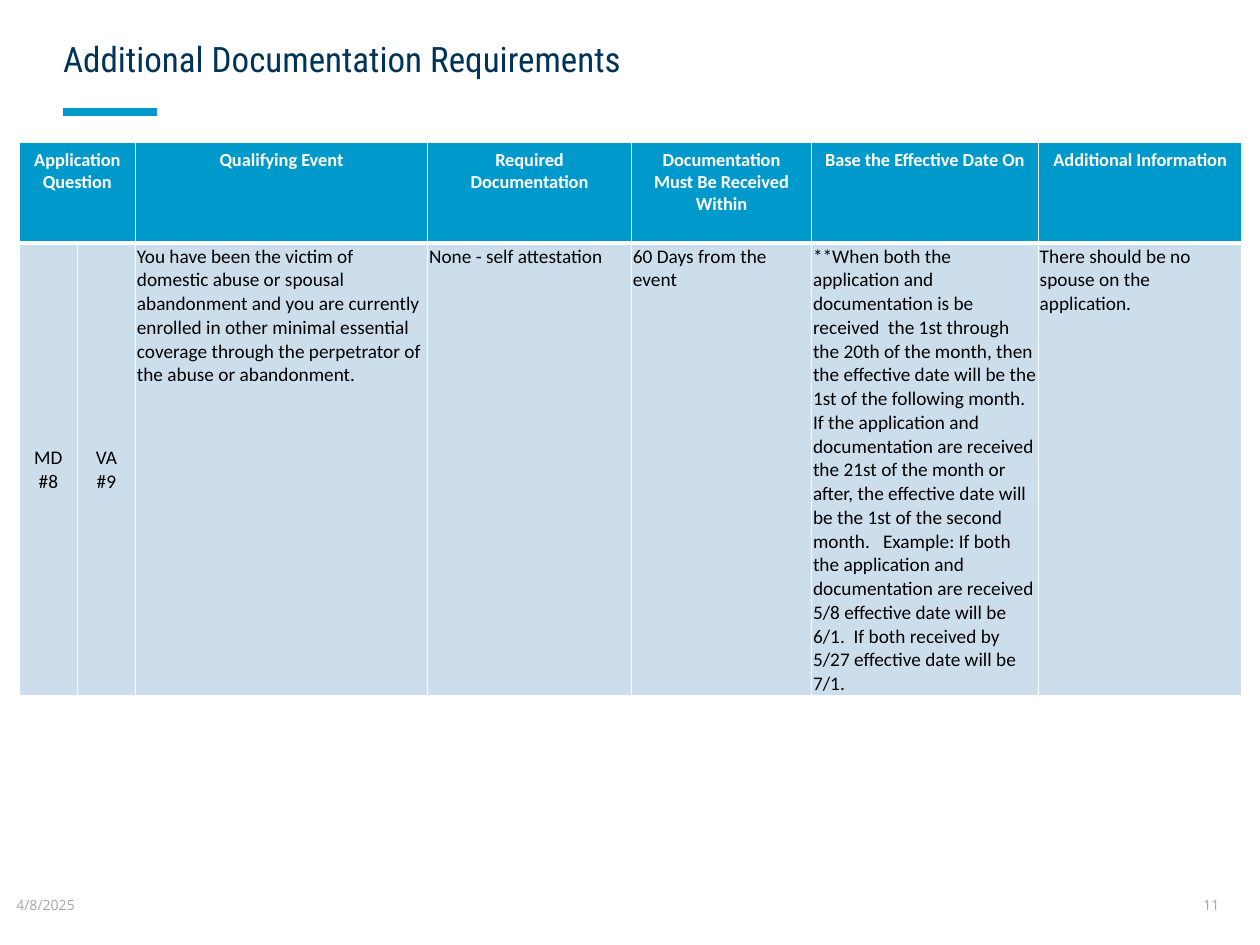
import pptx
import pptx.util
import pptx.dml.color
import pptx.enum.shapes
import pptx.enum.text
import pptx.oxml.ns
from lxml import etree

Cm, Pt = pptx.util.Cm, pptx.util.Pt
ALIGN, ANCHOR = pptx.enum.text.PP_ALIGN, pptx.enum.text.MSO_ANCHOR
INK = {"navy": "003359", "blue": "0099CC", "pale": "CCDEEC",
       "grey": "A6A6A6", "white": "FFFFFF", "black": "000000"}
HEAD = ["Application Question", None, "Qualifying Event", "Required Documentation",
        "Documentation Must Be Received Within", "Base the Effective Date On",
        "Additional Information"]
BODY = [
    "MD\v#8",
    "VA\v#9",
    "You have been the victim of domestic abuse or spousal abandonment and you are "
    "currently enrolled in other minimal essential coverage through the perpetrator "
    "of the abuse or abandonment.",
    "None - self attestation",
    "60 Days from the event",
    "**When both the application and documentation is be received  the 1st through "
    "the 20th of the month, then the effective date will be the 1st of the following "
    "month.  If the application and documentation are received the 21st of the month "
    "or after, the effective date will be the 1st of the second month.   Example: If "
    "both the application and documentation are received 5/8 effective date will be "
    "6/1.  If both received by 5/27 effective date will be 7/1.",
    "There should be no spouse on the application.",
]
COLS = [1.17, 1.17, 5.89, 4.11, 3.63, 4.57, 4.11]
ROWS = [2.03, 9.12]


def color(name):
    return pptx.dml.color.RGBColor.from_string(INK[name])


def apply(item, form):
    for key, val in form.items():
        setattr(item, key, val)


def write(frame, text, ink, font, align=ALIGN.LEFT):
    frame.text = text
    para = frame.paragraphs[0]
    para.alignment = align
    for run in para.runs:
        apply(run.font, font)
        run.font.color.rgb = color(ink)
    return para


def place(shape, box):
    apply(shape, dict(zip(("left", "top", "width", "height"), map(Cm, box))))


def pad(left, top, right, base):
    names = ("margin_left", "margin_top", "margin_right", "margin_bottom")
    return dict(zip(names, map(Cm, (left, top, right, base))))


def header(slide, box):
    left, top, width, height = box
    title = slide.shapes.title
    place(title, box)
    frame = title.text_frame
    apply(frame, {"word_wrap": True, "vertical_anchor": ANCHOR.MIDDLE,
                  "auto_size": pptx.enum.text.MSO_AUTO_SIZE.NONE,
                  **pad(0, 0.76, 0, 0.51)})
    para = write(frame, "Additional Documentation Requirements", "navy",
                 {"name": "Roboto Condensed", "size": Pt(20)})
    para.line_spacing = 0.9

    level = Cm(top + height + 0.05)
    rule = slide.shapes.add_connector(pptx.enum.shapes.MSO_CONNECTOR.STRAIGHT,
                                      Cm(left), level, Cm(left + 1.9), level)
    rule.line.color.rgb = color("blue")
    rule.line.width = Pt(4.5)
    etree.SubElement(rule._element.spPr, pptx.oxml.ns.qn("a:effectLst"))


def border(cell, base):
    """Draw white cell borders, with the bottom one base points wide."""
    props = cell._tc.get_or_add_tcPr()
    widths = {"lnL": 1, "lnR": 1, "lnT": 1, "lnB": base}
    for spot, (tag, width) in enumerate(widths.items()):
        line = etree.Element(pptx.oxml.ns.qn("a:" + tag), w=str(Pt(width)))
        fill = etree.SubElement(line, pptx.oxml.ns.qn("a:solidFill"))
        etree.SubElement(fill, pptx.oxml.ns.qn("a:srgbClr"), val=INK["white"])
        props.insert(spot, line)


def grid(slide, left, top):
    table = slide.shapes.add_table(len(ROWS), len(COLS), Cm(left), Cm(top),
                                   Cm(sum(COLS)), Cm(sum(ROWS))).table
    for col, width in zip(table.columns, COLS):
        col.width = Cm(width)
    for row, height in zip(table.rows, ROWS):
        row.height = Cm(height)
    table.cell(0, 0).merge(table.cell(0, 1))

    for col, (label, detail) in enumerate(zip(HEAD, BODY)):
        top_cell, low_cell = table.cell(0, col), table.cell(1, col)
        for cell, fill, base in ((top_cell, "blue", 3), (low_cell, "pale", 1)):
            cell.fill.solid()
            cell.fill.fore_color.rgb = color(fill)
            border(cell, base)
        if label:
            write(top_cell.text_frame, label, "white",
                  {"name": "Calibri", "size": Pt(10.5), "bold": True}, ALIGN.CENTER)
        key = col < 2
        apply(low_cell, {"vertical_anchor": ANCHOR.MIDDLE if key else ANCHOR.TOP,
                         **pad(0.03, 0.03, 0.03, 0)})
        write(low_cell.text_frame, detail, "black",
              {"name": "Calibri", "size": Pt(11), "bold": False},
              ALIGN.CENTER if key else ALIGN.LEFT)


def note(slide, text, box, wrap):
    shape = slide.shapes.add_textbox(*map(Cm, box))
    apply(shape.text_frame, {"word_wrap": wrap, "vertical_anchor": ANCHOR.MIDDLE,
                             **pad(0, 0.13, 0, 0.13)})
    write(shape.text_frame, text, "grey", {"name": "Open Sans", "size": Pt(8)})


def footer(slide, top, height):
    note(slide, "4/8/2025", (0.33, top, 1.85, height), False)
    note(slide, "11", (24.26, top, 0.69, height), True)


def main():
    deck = pptx.Presentation()
    apply(deck, {"slide_width": Cm(25.4), "slide_height": Cm(19.05)})
    slide = deck.slides.add_slide(deck.slide_layouts.get_by_name("Title Only"))
    header(slide, (1.27, 0, 17.15, 2.21))
    footer(slide, 17.73, 1.02)
    grid(slide, 0.39, 2.87)
    deck.save("out.pptx")


if __name__ == "__main__":
    main()
